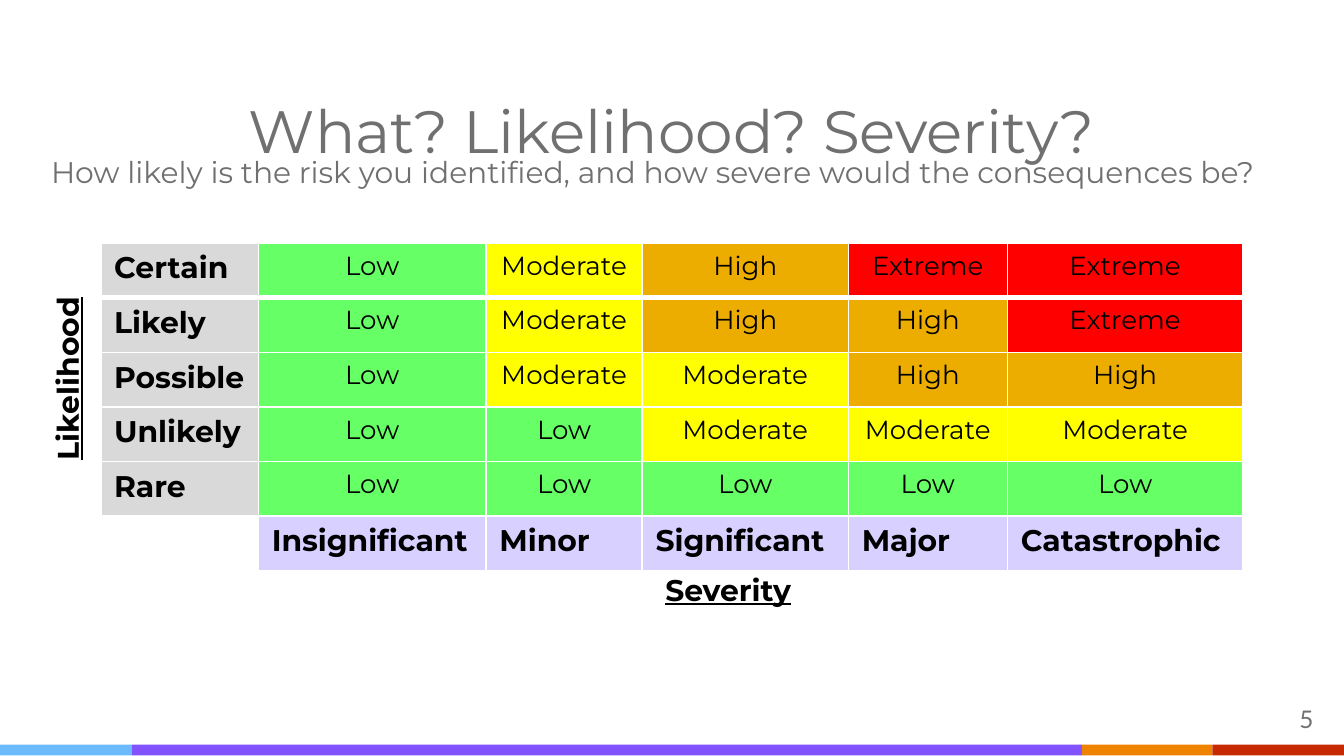
from dataclasses import dataclass

from lxml.etree import SubElement as Sub
from pptx import Presentation
from pptx.dml.color import RGBColor as RGB
from pptx.enum.shapes import MSO_SHAPE as Shape
from pptx.enum.text import MSO_ANCHOR as Anchor, PP_ALIGN as Align
from pptx.oxml.ns import qn
from pptx.util import Inches, Pt


@dataclass(frozen=True)
class Theme:
    """Colours, fonts and type sizes of the slide."""
    font: str = "Montserrat"
    digit: str = "Lato"
    grey: str = "707070"
    black: str = "000000"
    white: str = "FFFFFF"
    side: str = "D9D9D9"
    foot: str = "D8D1FF"
    title: int = 32
    body: int = 16
    cell: int = 14
    page: int = 13


THEME = Theme()
STRIPS = [(0.98, "6BBAFC"), (7.07, "8252FF"), (0.97, "EF8300"), (0.98, "C72900")]
LEVELS = {
    "L": ("Low", "66FF66"),
    "M": ("Moderate", "FFFF00"),
    "H": ("High", "EDAD00"),
    "E": ("Extreme", "FF0000"),
}
RISKS = {
    "Certain": "LMHEE",
    "Likely": "LMHHE",
    "Possible": "LMMHH",
    "Unlikely": "LLMMM",
    "Rare": "LLLLL",
}
HARMS = ["Insignificant", "Minor", "Significant", "Major", "Catastrophic"]
WIDTHS = [1.17, 1.69, 1.16, 1.53, 1.18, 1.75]


def style(para, size, color=THEME.black, bold=False, align=Align.LEFT, face=THEME.font):
    """Set the alignment and font of one paragraph."""
    para.alignment = align
    font = para.font
    font.name, font.size, font.bold = face, Pt(size), bold
    font.color.rgb = RGB.from_string(color)


def add_text(slide, box, text, size, indent=0, anchor=Anchor.TOP, **look):
    """Place one line of text in a box and return its shape."""
    shape = slide.shapes.add_textbox(*map(Inches, box))
    frame = shape.text_frame
    frame.word_wrap = True
    frame.vertical_anchor = anchor
    frame.margin_left = Inches(0.1 + indent)
    frame.margin_top = frame.margin_right = frame.margin_bottom = Inches(0.1)
    para = frame.paragraphs[0]
    para.text = text
    style(para, size, **look)
    return shape


def add_strips(slide, left, top, height):
    """Draw the coloured strips side by side from the left."""
    for width, color in STRIPS:
        strip = slide.shapes.add_shape(
            Shape.RECTANGLE, *map(Inches, (left, top, width, height)))
        strip.shadow.inherit = False
        strip.fill.solid()
        strip.fill.fore_color.rgb = RGB.from_string(color)
        strip.line.fill.background()
        left += width


def add_heads(slide, left, top, width):
    """Place the title and the question below it."""
    add_text(slide, (left + 0.69, top, width - 1.37, 0.94), "What? Likelihood? Severity?",
             THEME.title, anchor=Anchor.BOTTOM, color=THEME.grey, align=Align.CENTER)
    add_text(slide, (left, top + 0.65, width, 0.58),
             "How likely is the risk you identified, and how severe would the consequences be?",
             THEME.body, indent=0.12, color=THEME.grey)


def set_edges(cell, low):
    """Give a cell white borders, with its own bottom width."""
    props = cell._tc.get_or_add_tcPr()
    for tag, width in (("lnL", 1), ("lnR", 1), ("lnT", 1), ("lnB", low)):
        line = Sub(props, qn(f"a:{tag}"), w=str(Pt(width)))
        Sub(Sub(line, qn("a:solidFill")), qn("a:srgbClr"), val=THEME.white)


def fill_cell(cell, text, color, label, low):
    """Write, colour and border one cell."""
    set_edges(cell, low)
    cell.fill.solid()
    cell.fill.fore_color.rgb = RGB.from_string(color)
    cell.text = text
    size, align = (THEME.body, Align.LEFT) if label else (THEME.cell, Align.CENTER)
    style(cell.text_frame.paragraphs[0], size, bold=label, align=align)


def add_grid(slide, left, top, width, height):
    """Build the risk table."""
    rows = [[(name, THEME.side)] + [LEVELS[key] for key in keys]
            for name, keys in RISKS.items()]
    rows.append([("", THEME.white)] + [(name, THEME.foot) for name in HARMS])
    table = slide.shapes.add_table(
        len(rows), len(WIDTHS), *map(Inches, (left, top, width, height))).table
    for col, span in zip(table.columns, WIDTHS):
        col.width = Inches(span * width / sum(WIDTHS))
    for i, row in enumerate(rows):
        for j, (text, color) in enumerate(row):
            label = j == 0 or i == len(rows) - 1
            fill_cell(table.cell(i, j), text, color, label, 3 if i == 0 else 1)


def add_axes(slide, left, top):
    """Name the two axes of the table."""
    side = add_text(slide, (left, top, 1.61, 0.58), "Likelihood",
                    THEME.body, indent=0.12, bold=True)
    side.rotation = 270
    foot = add_text(slide, (left + 4.98, top + 1.6, 1.35, 0.58), "Severity",
                    THEME.body, indent=0.12, bold=True)
    for shape in (side, foot):
        shape.text_frame.paragraphs[0].font.underline = True


def main():
    """Build and save the slide."""
    deck = Presentation()
    deck.slide_width = Inches(10)
    deck.slide_height = deck.slide_width * 9 // 16
    slide = deck.slides.add_slide(deck.slide_layouts[6])
    add_strips(slide, 0, 5.54, 0.08)
    add_heads(slide, 0.16, 0.39, 9.67)
    add_text(slide, (9.27, 5.14, 0.6, 0.34), "5", THEME.page,
             color=THEME.grey, align=Align.RIGHT, face=THEME.digit)
    add_grid(slide, 0.75, 1.81, 8.5, 2.44)
    add_axes(slide, -0.25, 2.55)
    deck.save("out.pptx")


if __name__ == "__main__":
    main()
